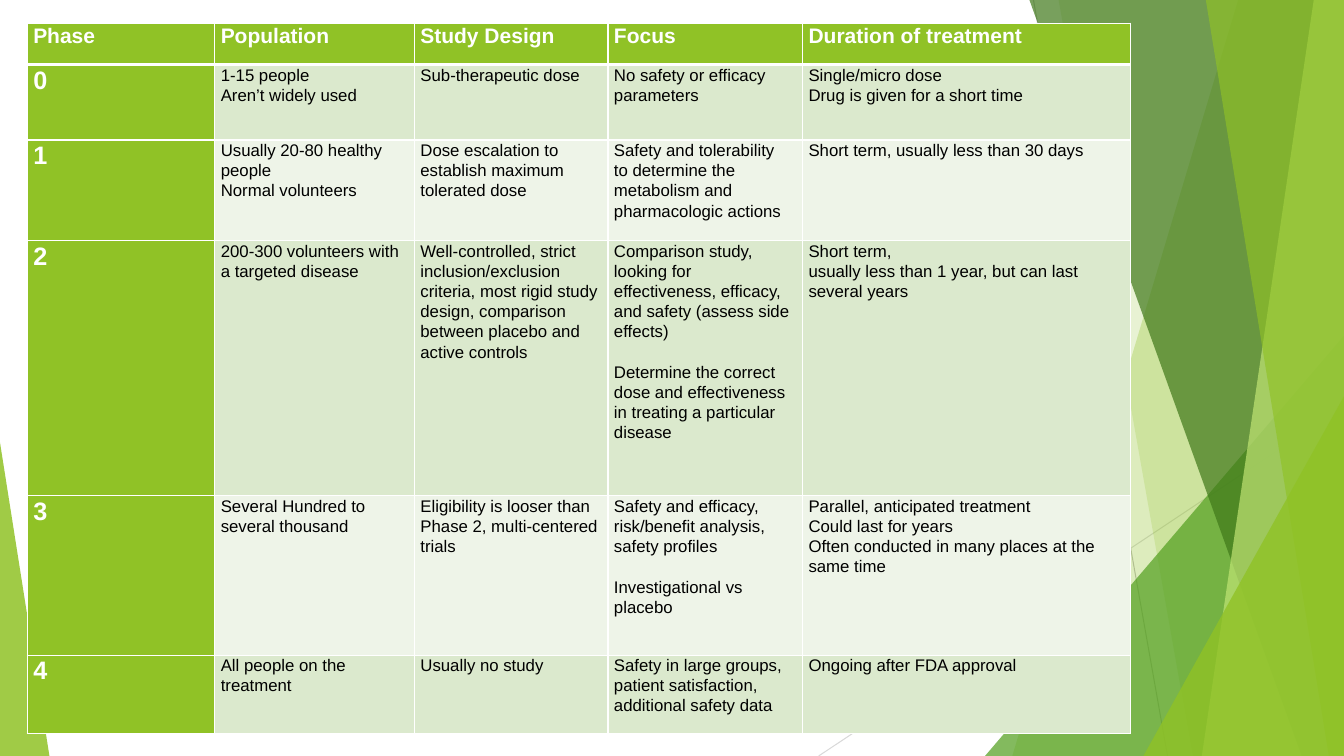
"""Build a slide that compares the phases of clinical trials."""
from lxml.etree import SubElement as Sub
from pptx import Presentation
from pptx.dml.color import RGBColor as RGB
from pptx.enum.shapes import MSO_CONNECTOR as Link, MSO_SHAPE as Kind
from pptx.oxml.ns import qn
from pptx.util import Inches, Pt

COLORS = {
    "lime": "90C226", "leaf": "54A021", "pine": "3F7819", "pale": "C0E474",
    "mint": "DBE9CD", "mist": "EEF4E8", "white": "FFFFFF", "black": "000000",
    "gray": "BFBFBF", "silver": "D9D9D9",
}
WIDTH, HEIGHT = 13.33, 7.5
COLS = [1.86, 1.98, 1.92, 1.93, 3.25]
ROWS = [0.41, 0.75, 1, 2.53, 1.58, 0.78]
LINES = [((10.25, 0), (11.58, HEIGHT), "gray"), ((WIDTH, 4.03), (8.12, HEIGHT), "silver")]
BACK = [(12.28, 10.04, "lime", 30), (10.5, 11.83, "lime", 20)]
FRONT = [(10.21, 12.91, "pine", 70), (13.03, 11.92, "pale", 70), (11.96, 13.18, "lime", 65)]
PHASES = [
    ["Phase", "Population", "Study Design", "Focus", "Duration of treatment"],
    ["0", "1-15 people\nAren’t widely used", "Sub-therapeutic dose",
     "No safety or efficacy parameters",
     "Single/micro dose\nDrug is given for a short time"],
    ["1", "Usually 20-80 healthy people\nNormal volunteers",
     "Dose escalation to establish maximum tolerated dose",
     "Safety and tolerability\nto determine the metabolism and pharmacologic actions",
     "Short term, usually less than 30 days"],
    ["2", "200-300 volunteers with a targeted disease",
     "Well-controlled, strict inclusion/exclusion criteria, most rigid study design, "
     "comparison between placebo and active controls",
     "Comparison study, looking for effectiveness, efficacy, and safety (assess side effects)"
     "\n\nDetermine the correct dose and effectiveness in treating a particular disease",
     "Short term,\nusually less than 1 year, but can last several years"],
    ["3", "Several Hundred to several thousand",
     "Eligibility is looser than Phase 2, multi-centered trials",
     "Safety and efficacy, risk/benefit analysis, safety profiles"
     "\n\nInvestigational vs placebo",
     "Parallel, anticipated treatment\nCould last for years\n"
     "Often conducted in many places at the same time"],
    ["4", "All people on the treatment", "Usually no study",
     "Safety in large groups, patient satisfaction, additional safety data",
     "Ongoing after FDA approval"],
]


def write(frame, text, font="Arial", size=12, color="black", bold=False, lead=1.07, gap=14.4):
    """Fill a frame line by line; an empty line becomes space before the next."""
    para, space = frame.paragraphs[0], 0
    for num, line in enumerate(text.split("\n")):
        if not line:
            space = gap
            continue
        if num:
            para = frame.add_paragraph()
        para.line_spacing, para.space_before = lead, Pt(space)
        space = 0
        run = para.add_run()
        run.text = line
        run.font.name, run.font.size, run.font.bold = font, Pt(size), bold
        run.font.color.rgb = RGB.from_string(COLORS[color])


class Deck:
    """Hold the style and the current slide."""

    def __init__(self):
        """Open a blank slide."""
        self.show = Presentation()
        self.show.slide_width, self.show.slide_height = Inches(WIDTH), Inches(HEIGHT)
        self.slide = self.show.slides.add_slide(self.show.slide_layouts[6])
        self.items = self.slide.shapes

    def paint(self, shape, color, alpha):
        """Give a shape a see-through fill and no line."""
        shape.shadow.inherit = False
        shape.fill.solid()
        shape.fill.fore_color.rgb = RGB.from_string(COLORS[color])
        shape.line.fill.background()
        tone = next(shape.element.spPr.iter(qn("a:srgbClr")))
        Sub(tone, qn("a:alpha"), val=str(alpha * 1000))

    def line(self, start, end, color):
        """Draw a thin line."""
        link = self.items.add_connector(Link.STRAIGHT, *map(Inches, start + end))
        link.line.color.rgb = RGB.from_string(COLORS[color])
        link.line.width = Pt(0.75)
        Sub(link.element.spPr, qn("a:effectLst"))

    def band(self, top, foot, color, alpha):
        """Draw a slanted band that reaches the right edge."""
        pen = self.items.build_freeform(Inches(top), 0)
        ends = [(WIDTH, 0), (WIDTH, HEIGHT), (foot, HEIGHT)]
        pen.add_line_segments([(Inches(x), Inches(y)) for x, y in ends], close=True)
        self.paint(pen.convert_to_shape(), color, alpha)

    def peak(self, left, top, width, tip, color, alpha):
        """Draw a triangle that stands on the bottom edge."""
        box = map(Inches, (left, top, width, HEIGHT - top))
        shape = self.items.add_shape(Kind.ISOSCELES_TRIANGLE, *box)
        shape.adjustments[0] = tip
        self.paint(shape, color, alpha)

    def edge(self, cell, foot):
        """Draw white borders round a cell."""
        props = cell._tc.get_or_add_tcPr()
        for side, width in (("L", 1), ("R", 1), ("T", 1), ("B", foot)):
            rule = Sub(props, qn("a:ln" + side), w=str(Pt(width)))
            Sub(Sub(rule, qn("a:solidFill")), qn("a:srgbClr"), val=COLORS["white"])

    def table(self, left, top, cols, rows, data):
        """Draw a table with a green head row and first column."""
        box = map(Inches, (left, top, sum(cols), sum(rows)))
        grid = self.items.add_table(len(rows), len(cols), *box).table
        for col, width in zip(grid.columns, cols):
            col.width = Inches(width)
        for row, height in zip(grid.rows, rows):
            row.height = Inches(height)
        for r, texts in enumerate(data):
            for c, text in enumerate(texts):
                cell = grid.cell(r, c)
                cell.margin_left = cell.margin_right = Inches(0.06)
                cell.margin_top = cell.margin_bottom = 0
                self.edge(cell, 1 if r else 3)
                head = r == 0 or c == 0
                fill = "lime" if head else "mint" if r % 2 else "mist"
                cell.fill.solid()
                cell.fill.fore_color.rgb = RGB.from_string(COLORS[fill])
                size = 15 if r == 0 else 18 if c == 0 else 12
                write(cell.text_frame, text, size=size, bold=head,
                      color="white" if head else "black")


def main():
    """Draw the backdrop and the table, then save."""
    deck = Deck()
    for line in LINES:
        deck.line(*line)
    for band in BACK:
        deck.band(*band)
    deck.peak(9.77, 3.33, 3.56, 1, "leaf", 72)
    for band in FRONT:
        deck.band(*band)
    deck.peak(11.34, 3.93, 1.99, 1, "lime", 80)
    deck.peak(0, 4.39, 0.49, 0, "lime", 85)
    deck.table(0.27, 0.23, COLS, ROWS, PHASES)
    deck.show.save("out.pptx")


if __name__ == "__main__":
    main()
